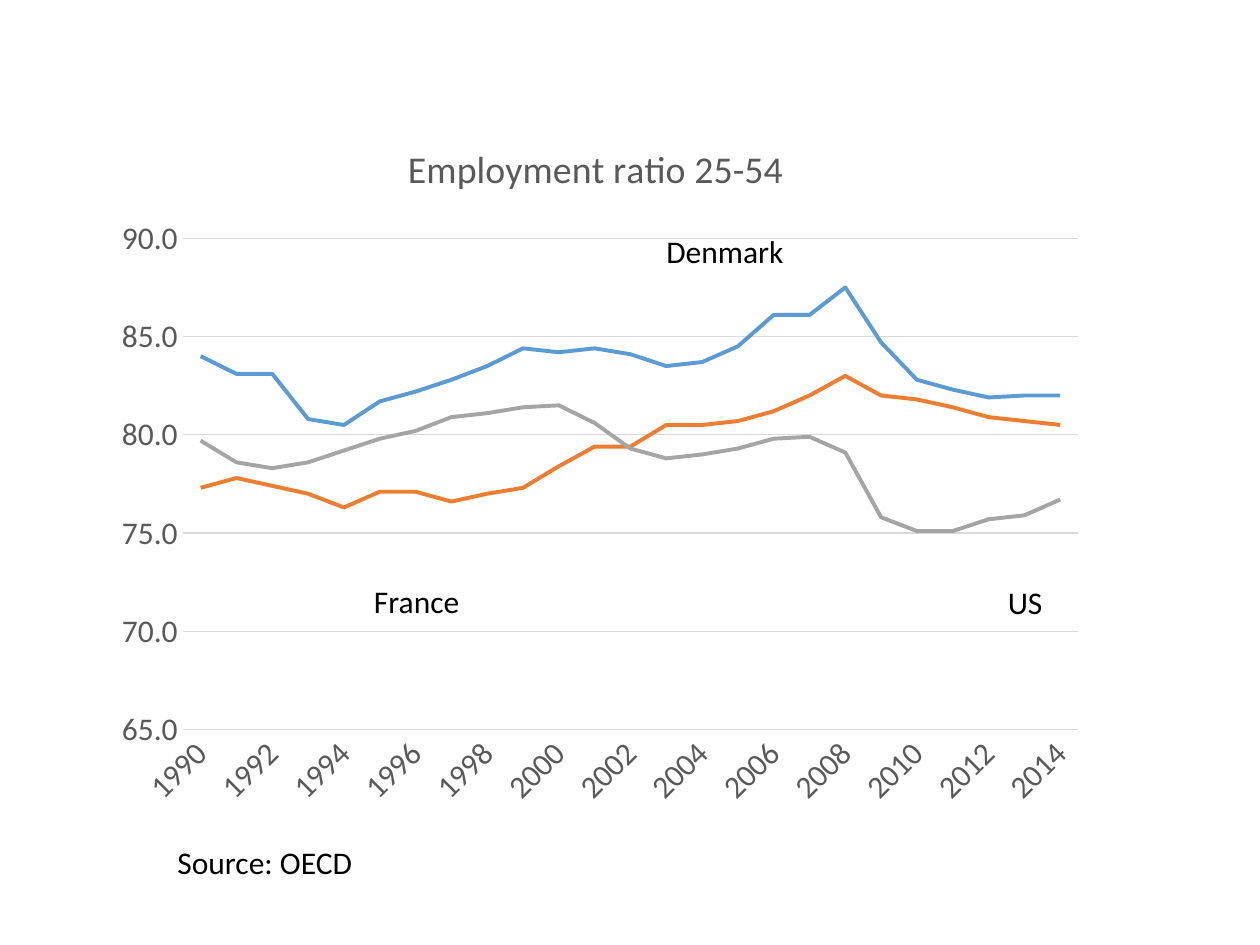
from lxml import etree
from pptx import Presentation
from pptx import util as u
from pptx.chart.data import CategoryChartData
from pptx.dml.color import RGBColor
from pptx.enum import chart as charts, text
from pptx.oxml.ns import qn

FONT = "Calibri"
COLORS = {"text": "000000", "axis": "595959", "grid": "D9D9D9",
          "Denmark": "5B9BD5", "France": "ED7D31", "US": "A5A5A5"}
YEARS = range(1990, 2015)
RATIOS = {
    "Denmark": (84.0, 83.1, 83.1, 80.8, 80.5, 81.7, 82.2, 82.8, 83.5, 84.4,
                84.2, 84.4, 84.1, 83.5, 83.7, 84.5, 86.1, 86.1, 87.5, 84.7,
                82.8, 82.3, 81.9, 82.0, 82.0),
    "France": (77.3, 77.8, 77.4, 77.0, 76.3, 77.1, 77.1, 76.6, 77.0, 77.3,
               78.4, 79.4, 79.4, 80.5, 80.5, 80.7, 81.2, 82.0, 83.0, 82.0,
               81.8, 81.4, 80.9, 80.7, 80.5),
    "US": (79.7, 78.6, 78.3, 78.6, 79.2, 79.8, 80.2, 80.9, 81.1, 81.4,
           81.5, 80.6, 79.3, 78.8, 79.0, 79.3, 79.8, 79.9, 79.1, 75.8,
           75.1, 75.1, 75.7, 75.9, 76.7),
}


def rgb(name):
    return RGBColor.from_string(COLORS[name])


def set_font(font, size, color):
    font.name, font.size, font.bold = FONT, u.Pt(size), False
    font.color.rgb = rgb(color)


def set_line(line, color, width):
    line.color.rgb = rgb(color)
    line.width = u.Pt(width)


def set_plot_box(chart, **fractions):
    """Fix the inner plot area as fractions of the chart box."""
    plot_area = chart._chartSpace.chart.plotArea
    for layout in plot_area.findall(qn("c:layout")):
        plot_area.remove(layout)
    layout = etree.Element(qn("c:layout"))
    manual = etree.SubElement(layout, qn("c:manualLayout"))
    settings = {"layoutTarget": "inner", "xMode": "edge", "yMode": "edge", **fractions}
    for tag, value in settings.items():
        etree.SubElement(manual, qn(f"c:{tag}")).set("val", str(value))
    plot_area.insert(0, layout)


def style_axes(chart):
    category_axis, value_axis = chart.category_axis, chart.value_axis
    for axis in (category_axis, value_axis):
        axis.major_tick_mark = axis.minor_tick_mark = charts.XL_TICK_MARK.NONE
        set_font(axis.tick_labels.font, 18, "axis")

    # Every second year, slanted
    set_line(category_axis.format.line, "grid", 0.75)
    element = category_axis._element
    element.find(qn("c:txPr")).find(qn("a:bodyPr")).set("rot", "-2700000")
    skip = etree.Element(qn("c:tickLblSkip"))
    skip.set("val", "2")
    element.find(qn("c:noMultiLvlLbl")).addprevious(skip)

    value_axis.minimum_scale, value_axis.maximum_scale = 65, 90
    value_axis.major_unit = 5
    value_axis.tick_labels.number_format = "#,##0.0"
    value_axis.tick_labels.number_format_is_linked = False
    value_axis.format.line.fill.background()
    set_line(value_axis.major_gridlines.format.line, "grid", 0.75)


def add_ratio_chart(slide, left, top, width, height):
    data = CategoryChartData(number_format="0.0")
    data.categories = [str(year) for year in YEARS]
    for country, values in RATIOS.items():
        data.add_series(country, values)
    chart = slide.shapes.add_chart(
        charts.XL_CHART_TYPE.LINE, u.Pt(left), u.Pt(top),
        u.Pt(width), u.Pt(height), data).chart
    set_font(chart.font, 18, "text")
    chart.has_legend = False
    chart.has_title = True
    chart.chart_title.include_in_layout = False
    title = chart.chart_title.text_frame
    title.text = "Employment ratio 25-54"
    set_font(title.paragraphs[0].font, 21.6, "axis")
    style_axes(chart)
    set_plot_box(chart, x=0.088, y=0.175, w=0.893, h=0.695)

    plot = chart.plots[0]
    plot.vary_by_categories = False
    for series in plot.series:
        series.smooth = False
        series.marker.style = charts.XL_MARKER_STYLE.NONE
        set_line(series.format.line, series.name, 2.25)


def add_label(slide, wording, left, top, width, height=29):
    shape = slide.shapes.add_textbox(u.Pt(left), u.Pt(top), u.Pt(width), u.Pt(height))
    frame = shape.text_frame
    frame.word_wrap = False
    frame.auto_size = text.MSO_AUTO_SIZE.SHAPE_TO_FIT_TEXT
    frame.text = wording
    set_font(frame.paragraphs[0].font, 18, "text")


def main():
    presentation = Presentation()
    presentation.slide_width, presentation.slide_height = u.Pt(720), u.Pt(540)
    slide = presentation.slides.add_slide(presentation.slide_layouts[6])

    add_ratio_chart(slide, 54, 65.5, 573, 404)

    # Country names and source
    for label in (("Denmark", 373.7, 128.9, 82), ("France", 206.6, 329, 64),
                  ("US", 568.8, 329.8, 34.6), ("Source: OECD", 94.3, 478, 116)):
        add_label(slide, *label)

    presentation.save("out.pptx")


if __name__ == "__main__":
    main()
